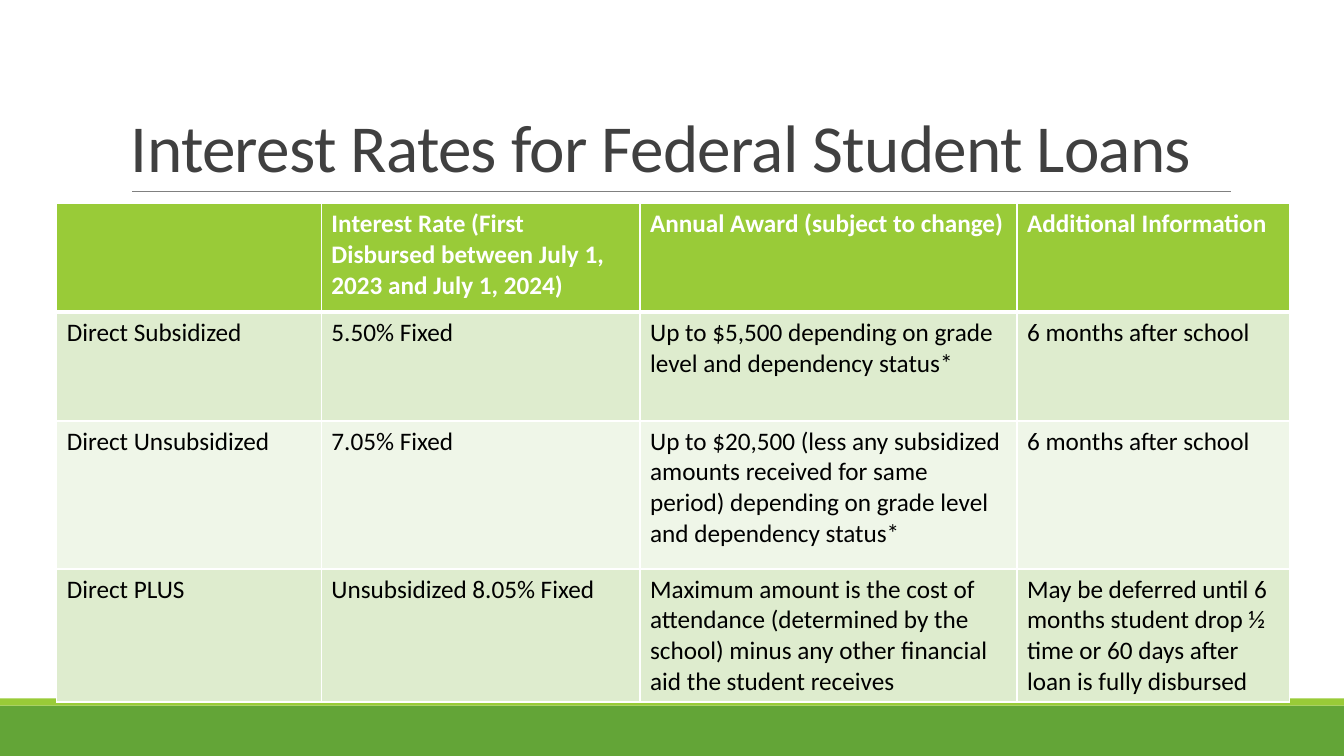
from lxml.etree import SubElement
from pptx import Presentation
from pptx.dml.color import RGBColor
from pptx.enum.shapes import MSO_CONNECTOR as Connector, MSO_SHAPE as Shape
from pptx.enum.text import MSO_ANCHOR as Anchor
from pptx.oxml.ns import qn
from pptx.util import Cm, Pt

WHITE = RGBColor(0xFF, 0xFF, 0xFF)
BLACK = RGBColor(0x00, 0x00, 0x00)
DARK_GRAY = RGBColor(0x40, 0x40, 0x40)
RULE_GRAY = RGBColor(0x80, 0x80, 0x80)
GREEN = RGBColor(0x63, 0xA5, 0x37)
LIME = RGBColor(0x99, 0xCB, 0x38)
BAND_DARK = RGBColor(0xDE, 0xEC, 0xCE)
BAND_LIGHT = RGBColor(0xEF, 0xF6, 0xE8)

SLIDE_WIDTH, SLIDE_HEIGHT = 33.87, 19.05
COLUMN_WIDTHS = [6.67, 8.03, 9.5, 6.87]
ROW_HEIGHTS = [2.74, 2.74, 3.73, 3.35]
LOANS = [
    ["", "Interest Rate (First Disbursed between July 1, 2023 and July 1, 2024)",
     "Annual Award (subject to change)", "Additional Information"],
    ["Direct Subsidized", "5.50% Fixed",
     "Up to $5,500 depending on grade level and dependency status*",
     "6 months after school"],
    ["Direct Unsubsidized", "7.05% Fixed",
     "Up to $20,500 (less any subsidized amounts received for same period) "
     "depending on grade level and dependency status*",
     "6 months after school"],
    ["Direct PLUS", "Unsubsidized 8.05% Fixed",
     "Maximum amount is the cost of attendance (determined by the school) "
     "minus any other financial aid the student receives",
     "May be deferred until 6 months student drop ½ time or 60 days after "
     "loan is fully disbursed"],
]


class SlideBuilder:
    font_name = "Calibri"

    def __init__(self, slide):
        self.slide = slide

    def add_run(self, paragraph, text, size, color, bold=False):
        run = paragraph.add_run()
        run.text = text
        run.font.name = self.font_name
        run.font.size = Pt(size)
        run.font.bold = bold
        run.font.color.rgb = color
        return run

    def bar(self, top, height, color):
        shape = self.slide.shapes.add_shape(
            Shape.RECTANGLE, 0, Cm(top), Cm(SLIDE_WIDTH), Cm(height))
        shape.shadow.inherit = False
        shape.fill.solid()
        shape.fill.fore_color.rgb = color
        shape.line.fill.background()

    def rule(self, left, right, top, color, width):
        line = self.slide.shapes.add_connector(
            Connector.STRAIGHT, Cm(left), Cm(top), Cm(right), Cm(top))
        line.line.color.rgb = color
        line.line.width = Pt(width)
        SubElement(line._element.spPr, qn("a:effectLst"))

    def title(self, text, left, top, width, height):
        box = self.slide.shapes.add_textbox(Cm(left), Cm(top), Cm(width), Cm(height))
        frame = box.text_frame
        frame.word_wrap = True
        frame.vertical_anchor = Anchor.BOTTOM
        paragraph = frame.paragraphs[0]
        paragraph.line_spacing = 0.85
        run = self.add_run(paragraph, text, 48, DARK_GRAY)
        run.font._element.set("spc", "-50")

    def border(self, cell, side, width):
        properties = cell._tc.get_or_add_tcPr()
        line = SubElement(properties, qn(f"a:ln{side}"), w=str(Pt(width)))
        fill = SubElement(line, qn("a:solidFill"))
        SubElement(fill, qn("a:srgbClr"), val=str(WHITE))

    def table(self, rows, left, top, widths, heights):
        table = self.slide.shapes.add_table(
            len(rows), len(widths), Cm(left), Cm(top),
            Cm(sum(widths)), Cm(sum(heights))).table
        for column, width in zip(table.columns, widths):
            column.width = Cm(width)
        for row, height in zip(table.rows, heights):
            row.height = Cm(height)
        for row_index, texts in enumerate(rows):
            header = row_index == 0
            band = LIME if header else BAND_DARK if row_index % 2 else BAND_LIGHT
            for column_index, text in enumerate(texts):
                cell = table.cell(row_index, column_index)
                # The line under the header is thicker than the rest
                for side in "LRTB":
                    under_header = (row_index, side) in ((0, "B"), (1, "T"))
                    self.border(cell, side, 3 if under_header else 1)
                cell.fill.solid()
                cell.fill.fore_color.rgb = band
                if text:
                    self.add_run(cell.text_frame.paragraphs[0], text, 18,
                                 WHITE if header else BLACK, header)


def main():
    presentation = Presentation()
    presentation.slide_width = Cm(SLIDE_WIDTH)
    presentation.slide_height = Cm(SLIDE_HEIGHT)
    builder = SlideBuilder(presentation.slides.add_slide(presentation.slide_layouts[6]))

    # Footer bars
    builder.bar(17.78, 1.27, GREEN)
    builder.bar(17.6, 0.18, LIME)

    # Title and its rule
    builder.rule(3.33, 31.01, 4.83, RULE_GRAY, 0.5)
    builder.title("Interest Rates for Federal Student Loans", 3.05, 0.79, 27.94, 4.04)

    # Loan table
    builder.table(LOANS, 1.43, 5.13, COLUMN_WIDTHS, ROW_HEIGHTS)

    presentation.save("out.pptx")


if __name__ == "__main__":
    main()
